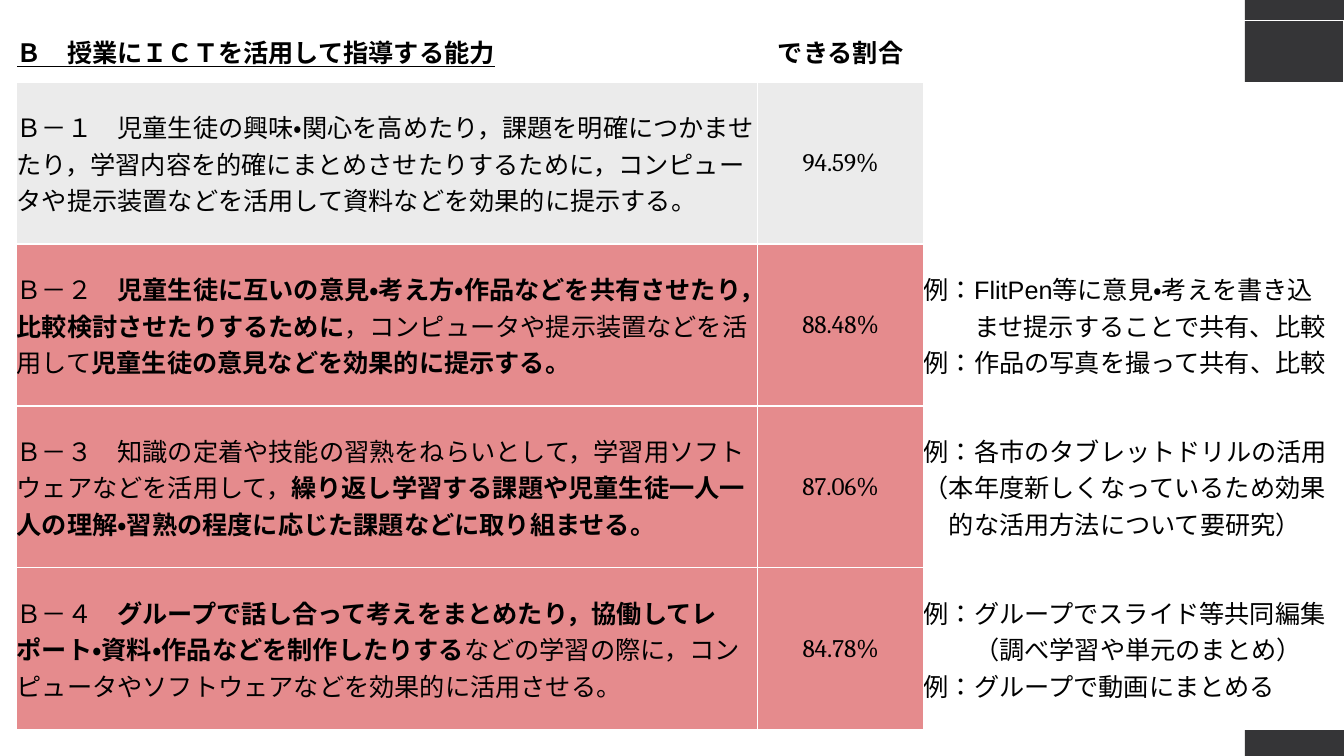
from lxml import etree
from pptx import Presentation
from pptx import util as u
from pptx.dml.color import RGBColor
from pptx.enum import lang, shapes, text
from pptx.oxml import ns

COLORS = {"text": "000000", "white": "FFFFFF", "bar": "353537",
          "plain": "EBEBEB", "focus": "E58B8D"}
SIZE = 18
COL_WIDTHS = (18.67, 4.19, 10.59)
HEADER_HEIGHT, ROW_HEIGHT = 1.55, 4.08

HEADERS = ("Ｂ　授業にＩＣＴを活用して指導する能力", "できる割合")

# Fill, ability (bold between asterisks), rate, examples as (indent in characters, line)
ROWS = (
    ("plain",
     "Ｂ－１　児童生徒の興味・関心を高めたり，課題を明確につかませたり，"
     "学習内容を的確にまとめさせたりするために，コンピュータや提示装置などを"
     "活用して資料などを効果的に提示する。",
     "94.59%", ()),
    ("focus",
     "Ｂ－２　*児童生徒に互いの意見・考え方・作品などを共有させたり，"
     "比較検討させたりするために*，コンピュータや提示装置などを活用して"
     "*児童生徒の意見などを効果的に提示する。*",
     "88.48%",
     ((0, "例：FlitPen等に意見・考えを書き込"),
      (2, "ませ提示することで共有、比較"),
      (0, "例：作品の写真を撮って共有、比較"))),
    ("focus",
     "Ｂ－３　知識の定着や技能の習熟をねらいとして，学習用ソフトウェアなどを活用して，"
     "*繰り返し学習する課題や児童生徒一人一人の理解・習熟の程度に応じた"
     "課題などに取り組ませる。*",
     "87.06%",
     ((0, "例：各市のタブレットドリルの活用"),
      (0, "（本年度新しくなっているため効果"),
      (1, "的な活用方法について要研究）"))),
    ("focus",
     "Ｂ－４　*グループで話し合って考えをまとめたり，協働してレポート・資料・作品などを"
     "制作したりする*などの学習の際に，コンピュータやソフトウェアなどを"
     "効果的に活用させる。",
     "84.78%",
     ((0, "例：グループでスライド等共同編集"),
      (2, "（調べ学習や単元のまとめ）"),
      (0, "例：グループで動画にまとめる"))),
)


def rgb(name):
    return RGBColor.from_string(COLORS[name])


def add_side_bar(slide):
    sp = slide.shapes.add_shape(shapes.MSO_SHAPE.RECTANGLE,
                                u.Cm(31.37), 0, u.Cm(2.54), u.Cm(19.05))
    sp.shadow.inherit = False
    sp.fill.solid()
    sp.fill.fore_color.rgb = rgb("bar")
    sp.line.fill.background()


def add_borders(cell):
    tc_pr = cell._tc.get_or_add_tcPr()
    for i, side in enumerate(("lnL", "lnR", "lnT", "lnB")):
        ln = etree.Element(ns.qn(f"a:{side}"), w=str(u.Pt(1)))
        fill = etree.SubElement(ln, ns.qn("a:solidFill"))
        etree.SubElement(fill, ns.qn("a:srgbClr"), val=COLORS["white"])
        tc_pr.insert(i, ln)


def format_cell(cell, fill=None):
    cell.vertical_anchor = text.MSO_ANCHOR.MIDDLE
    for side in ("left", "right", "top", "bottom"):
        setattr(cell, f"margin_{side}", 0)
    if fill:
        cell.fill.solid()
        cell.fill.fore_color.rgb = rgb(fill)
    else:
        cell.fill.background()
    add_borders(cell)


def add_run(p, words, **formats):
    r = p.add_run()
    r.text = words
    defaults = {"name": "Cambria", "size": u.Pt(SIZE), "bold": False,
                "language_id": lang.MSO_LANGUAGE_ID.JAPANESE}
    for name, value in (defaults | formats).items():
        setattr(r.font, name, value)
    r.font.color.rgb = rgb("text")
    # Japanese text is typed with English as the alternative language
    r._r.get_or_add_rPr().set("altLang", "en-US")


def write_marked(p, words):
    """Write words, with the parts between asterisks in bold."""
    for i, part in enumerate(words.split("*")):
        if part:
            add_run(p, part, bold=i % 2 == 1)


def write_centred(cell, words, **formats):
    p = cell.text_frame.paragraphs[0]
    p.alignment = text.PP_ALIGN.CENTER
    add_run(p, words, **formats)


def write_examples(tf, lines):
    for i, (indent, words) in enumerate(lines):
        p = tf.add_paragraph() if i else tf.paragraphs[0]
        if indent:
            p._p.get_or_add_pPr().set("marL", str(u.Pt(indent * SIZE)))
        add_run(p, words, name="Arial")


def add_ability_table(slide):
    height = HEADER_HEIGHT + ROW_HEIGHT * len(ROWS)
    table = slide.shapes.add_table(len(ROWS) + 1, len(COL_WIDTHS), u.Cm(0.42), u.Cm(0.52),
                                   u.Cm(sum(COL_WIDTHS)), u.Cm(height)).table
    table.first_row = table.horz_banding = False
    for column, width in zip(table.columns, COL_WIDTHS):
        column.width = u.Cm(width)
    for i, row in enumerate(table.rows):
        row.height = u.Cm(ROW_HEIGHT if i else HEADER_HEIGHT)

    title, rate_title, blank = table.rows[0].cells
    for cell in (title, rate_title, blank):
        format_cell(cell)
    add_run(title.text_frame.paragraphs[0], HEADERS[0], bold=True, underline=True)
    write_centred(rate_title, HEADERS[1], bold=True)

    for i, (fill, ability, rate, examples) in enumerate(ROWS, 1):
        cells = tuple(table.rows[i].cells)
        for cell, color in zip(cells, (fill, fill, "white")):
            format_cell(cell, color)
        write_marked(cells[0].text_frame.paragraphs[0], ability)
        write_centred(cells[1], rate)
        write_examples(cells[2].text_frame, examples)


def main():
    prs = Presentation()
    prs.slide_width, prs.slide_height = u.Cm(33.87), u.Cm(19.05)
    slide = prs.slides.add_slide(prs.slide_layouts[6])
    add_side_bar(slide)
    add_ability_table(slide)
    prs.save("out.pptx")


if __name__ == "__main__":
    main()
